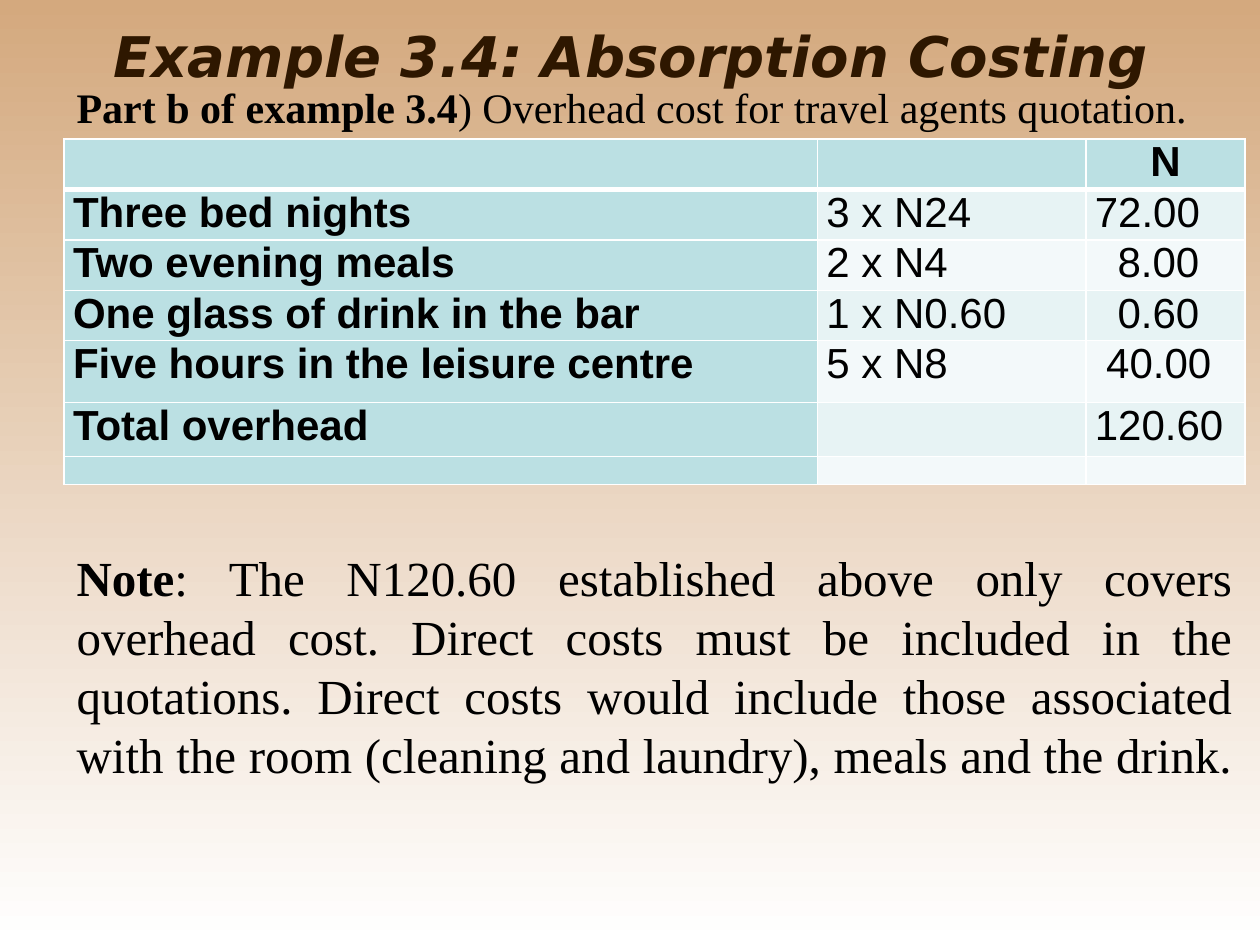
from dataclasses import dataclass

from lxml import etree
from pptx import Presentation
from pptx.dml.color import RGBColor
from pptx.enum.text import MSO_ANCHOR, PP_ALIGN
from pptx.oxml.ns import qn
from pptx.util import Inches, Pt

CENTER, JUSTIFY = PP_ALIGN.CENTER, PP_ALIGN.JUSTIFY
TOP, MIDDLE = MSO_ANCHOR.TOP, MSO_ANCHOR.MIDDLE
PAGE_WIDTH, PAGE_HEIGHT = Inches(10), Inches(7.5)


@dataclass(frozen=True)
class Theme:
    sky: str = "D4A97E"
    white: str = "FFFFFF"
    brown: str = "2E1700"
    black: str = "000000"
    label_fill: str = "BBE0E3"
    bands: tuple = ("E7F3F4", "F3F9FA")
    title_font: str = "DejaVu Sans"
    body_font: str = "Times New Roman"
    table_font: str = "Arial"
    title_size: int = 32
    table_size: int = 24
    note_size: int = 28
    empty_size: int = 10


@dataclass(frozen=True)
class Area:
    """Place and extent as shares of the page."""
    left: float
    top: float
    width: float
    height: float

    def lengths(self) -> tuple:
        return (int(PAGE_WIDTH * self.left), int(PAGE_HEIGHT * self.top),
                int(PAGE_WIDTH * self.width), int(PAGE_HEIGHT * self.height))


@dataclass(frozen=True)
class CostRow:
    label: str = ""
    sum: str = ""
    amount: str = ""
    height: float = 0.4
    indent: int = 0  # shift of the amount, in widths of a space


THEME = Theme()
LEFT, WIDTH = 0.051, 0.937
TITLE_AREA = Area(LEFT, 0.017, 0.9, 0.082)
INTRO_AREA = Area(LEFT, 0.08, WIDTH, 0.067)
TABLE_AREA = Area(LEFT, 0.147, WIDTH, 0.366)
NOTE_AREA = Area(LEFT, 0.573, WIDTH, 0.264)
COLUMNS = (5.98, 2.13, 1.26)
SPACE_WIDTH = Inches(0.09)
COSTS = (
    CostRow(amount="N"),
    CostRow("Three bed nights", "3 x N24", "72.00"),
    CostRow("Two evening meals", "2 x N4", "8.00", indent=2),
    CostRow("One glass of drink in the bar", "1 x N0.60", "0.60", indent=2),
    CostRow("Five hours in the leisure centre", "5 x N8", "40.00", 0.49, 1),
    CostRow("Total overhead", amount="120.60", height=0.43),
    CostRow(height=0.22),
)


def add_span(para, text: str, *, font: str, size: int, color: str = THEME.black,
             bold: bool = False, italic: bool = False) -> None:
    span = para.add_run()
    span.text = text
    span.font.name, span.font.size = font, Pt(size)
    span.font.bold, span.font.italic = bold, italic
    span.font.color.rgb = RGBColor.from_string(color)


def add_box(page, area: Area, *, align=JUSTIFY, anchor=TOP):
    """Add a wrapping text box and return its first paragraph."""
    frame = page.shapes.add_textbox(*area.lengths()).text_frame
    frame.word_wrap = True
    frame.vertical_anchor = anchor
    frame.paragraphs[0].alignment = align
    return frame.paragraphs[0]


def add_lead_text(page, area: Area, lead: str, rest: str, size: int) -> None:
    para = add_box(page, area)
    add_span(para, lead, font=THEME.body_font, size=size, bold=True)
    add_span(para, rest, font=THEME.body_font, size=size)


def set_borders(cell, top: float, bottom: float) -> None:
    properties = cell._tc.get_or_add_tcPr()
    for side, points in (("L", 1), ("R", 1), ("T", top), ("B", bottom)):
        line = etree.SubElement(properties, qn(f"a:ln{side}"), w=str(Pt(points)))
        fill = etree.SubElement(line, qn("a:solidFill"))
        etree.SubElement(fill, qn("a:srgbClr"), val=THEME.white)


def fill_cell(cell, text: str, *, bold: bool, align, indent: int) -> None:
    cell.margin_left = cell.margin_right = Inches(0.07)
    cell.margin_top = cell.margin_bottom = 0
    para = cell.text_frame.paragraphs[0]
    para.alignment = align
    if text:
        if indent:
            para._p.get_or_add_pPr().set("marL", str(indent * SPACE_WIDTH))
        add_span(para, text, font=THEME.table_font, size=THEME.table_size, bold=bold)
    else:
        etree.SubElement(para._p, qn("a:endParaRPr"), sz=str(THEME.empty_size * 100))


def add_cost_table(page, area: Area, costs: tuple) -> None:
    shape = page.shapes.add_table(len(costs), len(COLUMNS), *area.lengths())
    table = shape.table
    table.horz_banding = False
    for column, width in zip(table.columns, COLUMNS):
        column.width = Inches(width)
    for row_index, cost in enumerate(costs):
        table.rows[row_index].height = Inches(cost.height)
        header = row_index == 0
        for column_index, text in enumerate((cost.label, cost.sum, cost.amount)):
            cell = table.cell(row_index, column_index)
            strong = header or column_index == 0
            set_borders(cell, top=3 if row_index == 1 else 1, bottom=3 if header else 1)
            cell.fill.solid()
            color = THEME.label_fill if strong else THEME.bands[(row_index - 1) % 2]
            cell.fill.fore_color.rgb = RGBColor.from_string(color)
            fill_cell(cell, text, bold=strong, align=CENTER if header else JUSTIFY,
                      indent=cost.indent if column_index == 2 else 0)


def paint_background(page) -> None:
    fill = page.background.fill
    fill.gradient()
    fill.gradient_angle = 270
    for stop, color, place in zip(fill.gradient_stops, (THEME.sky, THEME.white), (0, 1)):
        stop.color.rgb = RGBColor.from_string(color)
        stop.position = place


def main() -> None:
    deck = Presentation()
    deck.slide_width, deck.slide_height = PAGE_WIDTH, PAGE_HEIGHT
    page = deck.slides.add_slide(deck.slide_layouts[6])
    paint_background(page)

    # Title and introduction
    title = add_box(page, TITLE_AREA, align=CENTER, anchor=MIDDLE)
    add_span(title, "Example 3.4: Absorption Costing", font=THEME.title_font,
             size=THEME.title_size, color=THEME.brown, bold=True, italic=True)
    add_lead_text(page, INTRO_AREA, "Part b of example 3.4",
                  ") Overhead cost for travel agents quotation.", THEME.table_size)

    # Overhead costs
    add_cost_table(page, TABLE_AREA, COSTS)

    # Closing note
    add_lead_text(page, NOTE_AREA, "Note",
                  ": The N120.60 established above only covers overhead cost. "
                  "Direct costs must be included in the quotations. Direct costs "
                  "would include those associated with the room (cleaning and "
                  "laundry), meals and the drink. ", THEME.note_size)
    deck.save("out.pptx")


if __name__ == "__main__":
    main()
